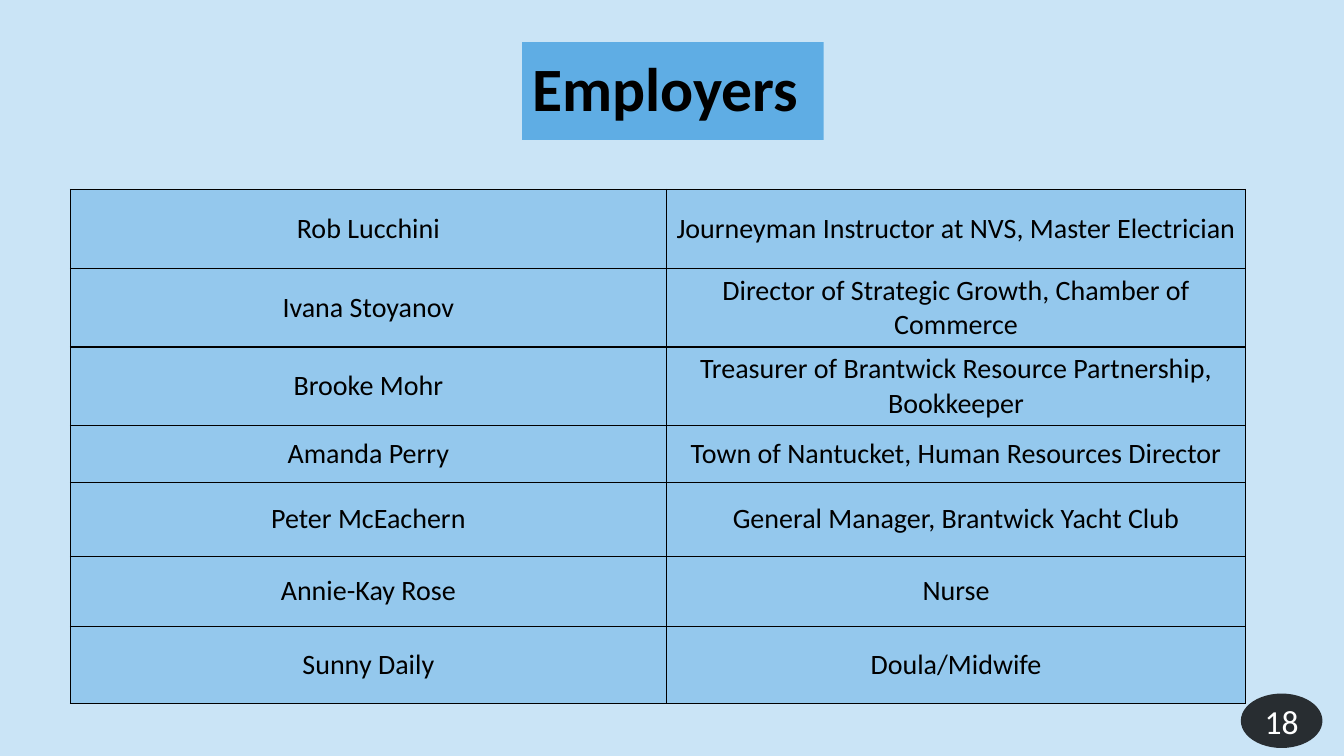
from lxml.etree import SubElement
from pptx import Presentation
from pptx.dml.color import RGBColor
from pptx.enum.shapes import MSO_SHAPE
from pptx.enum.text import MSO_ANCHOR, PP_ALIGN
from pptx.oxml import parse_xml
from pptx.oxml.ns import nsdecls, qn
from pptx.util import Pt

BLACK = "000000"
EMPLOYERS = [
    ("Rob Lucchini", "Journeyman Instructor at NVS, Master Electrician", 56.2),
    ("Ivana Stoyanov", "Director of Strategic Growth, Chamber of Commerce", 56.2),
    ("Brooke Mohr", "Treasurer of Brantwick Resource Partnership, Bookkeeper", 56.2),
    ("Amanda Perry", "Town of Nantucket, Human Resources Director", 40.6),
    ("Peter McEachern", "General Manager, Brantwick Yacht Club", 52.7),
    ("Annie-Kay Rose", "Nurse", 50.1),
    ("Sunny Daily", "Doula/Midwife", 55.1),
]


def set_fill(target, color):
    target.fill.solid()
    target.fill.fore_color.rgb = RGBColor.from_string(color)


def write_text(frame, text, size, color=BLACK, bold=False,
               align=PP_ALIGN.CENTER, line_spacing=None, space_after=0):
    frame.word_wrap = True
    paragraph = frame.paragraphs[0]
    paragraph.alignment = align
    paragraph.line_spacing = line_spacing
    paragraph.space_after = Pt(space_after)
    run = paragraph.add_run()
    run.text = text
    run.font.name = "Calibri"
    run.font.size = Pt(size)
    run.font.bold = bold
    run.font.color.rgb = RGBColor.from_string(color)


def add_panel(slide, kind, box, color):
    shape = slide.shapes.add_shape(kind, *map(Pt, box))
    shape.shadow.inherit = False
    shape.line.fill.background()
    set_fill(shape, color)
    shape.text_frame.vertical_anchor = MSO_ANCHOR.MIDDLE
    return shape


def add_title(slide, box):
    shape = add_panel(slide, MSO_SHAPE.RECTANGLE, box, "5FADE4")
    write_text(shape.text_frame, "Employers", 44, bold=True,
               align=PP_ALIGN.LEFT, line_spacing=0.9)


def add_borders(cell):
    properties = cell._tc.get_or_add_tcPr()
    for index, side in enumerate(("lnL", "lnR", "lnT", "lnB")):
        properties.insert(index, parse_xml(
            f'<a:{side} {nsdecls("a")} w="{Pt(1)}"><a:solidFill>'
            f'<a:srgbClr val="{BLACK}"/></a:solidFill></a:{side}>'))


def add_employer_table(slide, box):
    left, top, width, height = map(Pt, box)
    table = slide.shapes.add_table(
        len(EMPLOYERS), 2, left, top, width, height).table
    name_width = Pt(425.5)
    table.columns[0].width = name_width
    table.columns[1].width = width - name_width
    for row, (name, role, row_height) in zip(table.rows, EMPLOYERS):
        row.height = Pt(row_height)
        for cell, text in zip(row.cells, (name, role)):
            set_fill(cell, "94C8ED")
            add_borders(cell)
            cell.vertical_anchor = MSO_ANCHOR.MIDDLE
            write_text(cell.text_frame, text, 20)


def add_page_number(slide, box):
    shape = add_panel(slide, MSO_SHAPE.OVAL, box, BLACK)
    color = shape.fill._xPr.find(qn("a:solidFill"))[0]
    SubElement(color, qn("a:alpha"), val="80000")
    write_text(shape.text_frame, "18", 24, color="FFFFFF", space_after=6)


def build_employers_slide(presentation):
    slide = presentation.slides.add_slide(presentation.slide_layouts[6])
    set_fill(slide.background, "CAE4F6")
    add_title(slide, (373, 30.2, 215.3, 69.8))
    add_employer_table(slide, (50.4, 135.4, 839.5, 367.1))
    add_page_number(slide, (886.3, 495.4, 58.3, 38.9))


def main():
    presentation = Presentation()
    presentation.slide_width = Pt(960)
    presentation.slide_height = Pt(540)
    build_employers_slide(presentation)
    presentation.save("out.pptx")


if __name__ == "__main__":
    main()
